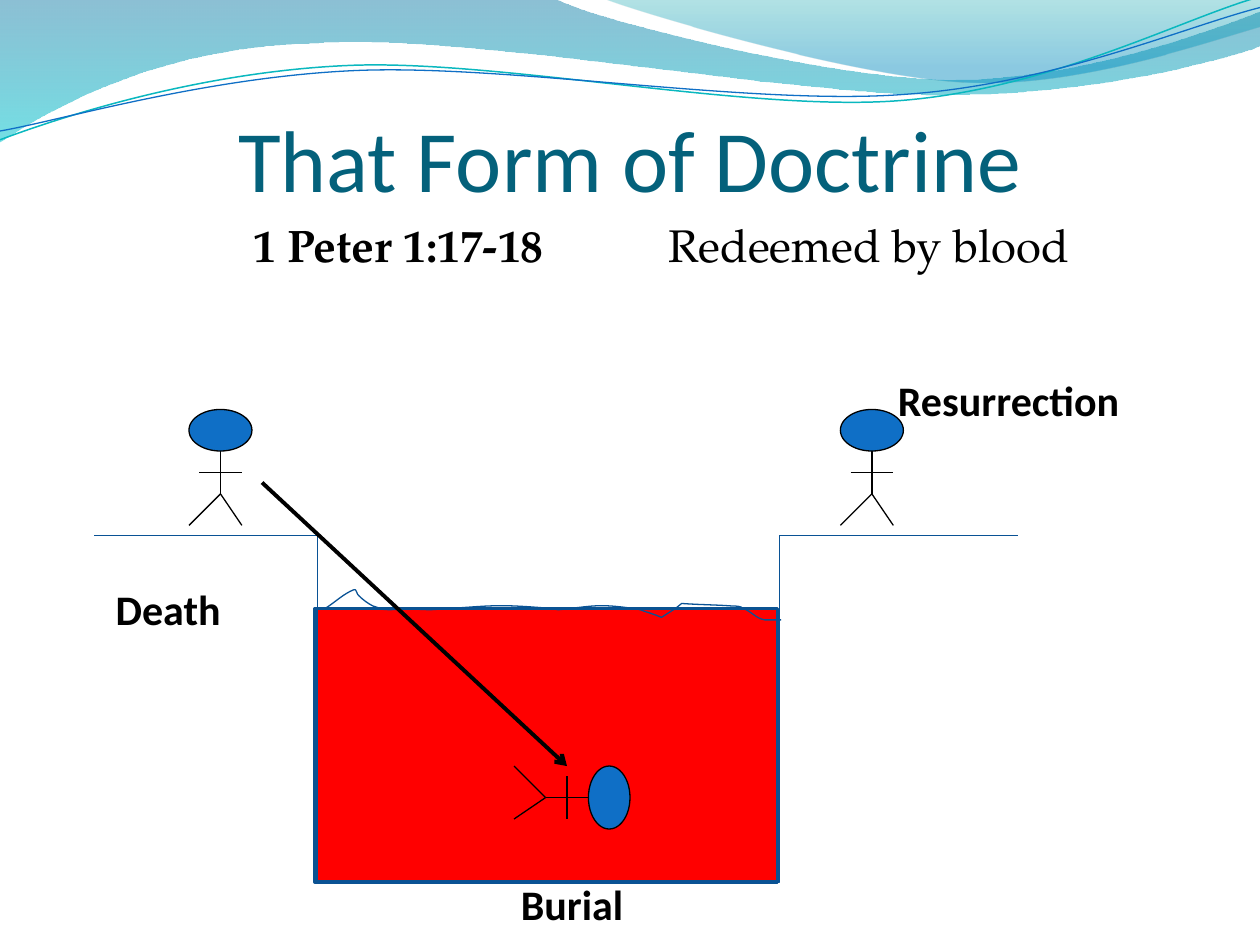
import dataclasses

import pptx
import pptx.dml.color
import pptx.enum.shapes
import pptx.enum.text
import pptx.oxml.ns
import pptx.util
import lxml.etree

Inches = pptx.util.Inches
Pt = pptx.util.Pt
Kind = pptx.enum.shapes.MSO_CONNECTOR
Shape = pptx.enum.shapes.MSO_SHAPE
Align = pptx.enum.text.PP_ALIGN
Anchor = pptx.enum.text.MSO_ANCHOR
Size = pptx.enum.text.MSO_AUTO_SIZE
qn = pptx.oxml.ns.qn


@dataclasses.dataclass(frozen=True)
class Theme:
    title: str = "04617B"
    ink: str = "000000"
    blood: str = "FF0000"
    edge: str = "0B5292"
    bank: str = "095295"
    head: str = "0F6FC6"
    teal: str = "0AB8BF"
    sans: str = "Calibri"
    serif: str = "TeX Gyre Pagella"
    big: int = 50
    verse: int = 26
    label: int = 24
    thin: float = 0.75
    sweep: tuple = ((0, "0074A1", 45), (1, "00C6CF", 55))
    crest: tuple = ((0, "00A1A9", 30), (0.8, "008BBF", 45))


THEME = Theme()

SWEEP = [(0, 0), (4.4, -0.01), (4.76, 0.17, 6.64, 0.63, 7.58, 0.63),
         (8.53, 0.63, 9.58, 0.26, 10, 0.09), (10.01, 0.36),
         (9.83, 0.44, 8.7, 0.76, 7.46, 0.75), (6.22, 0.75, 3.82, 0.28, 2.57, 0.34),
         (1.29, 0.36, 0.46, 0.83, -0.01, 1.13), (0, 0)]
CREST = [(4.79, -0.01), (5.09, 0.11, 6.82, 0.62, 7.69, 0.65),
         (8.56, 0.69, 9.61, 0.32, 10, 0.21), (10, 0), (4.79, -0.01)]
UPPER = [(0, 1.11), (0.48, 0.93, 1.58, 0.57, 2.77, 0.52),
         (3.95, 0.47, 5.93, 0.89, 7.13, 0.8), (8.33, 0.71, 9.38, 0.15, 9.98, -0.02)]
LOWER = [(0, 1.04), (0.47, 0.96, 1.64, 0.61, 2.83, 0.56),
         (4.03, 0.51, 5.97, 0.84, 7.17, 0.75), (8.36, 0.67, 9.41, 0.21, 10, 0.06)]
RIPPLE = [(0.08, 0), (0.16, -0.05, 0.23, -0.12, 0.31, -0.15),
          (0.33, -0.16, 0.33, -0.11, 0.35, -0.1), (0.38, -0.07, 0.42, -0.04, 0.46, -0.02),
          (0.64, 0.04, 0.49, -0.01, 0.91, 0.01), (1.42, -0.02, 1.4, -0.04, 1.88, 0),
          (1.9, 0, 1.91, 0.01, 1.93, 0.01), (2.22, -0.02, 2.24, -0.04, 2.53, 0),
          (2.57, 0, 2.6, 0.02, 2.64, 0.03), (2.7, 0.05), (2.75, 0.07), (2.86, 0),
          (2.91, -0.04), (3.05, -0.03, 3.18, -0.03, 3.31, -0.02),
          (3.34, -0.02, 3.38, -0.02, 3.4, 0), (3.46, 0.02, 3.5, 0.08, 3.57, 0.09),
          (3.61, 0.09, 3.65, 0.09, 3.7, 0.09)]


def tint(code):
    return pptx.dml.color.RGBColor.from_string(code)


def node(parent, name, **attrs):
    return lxml.etree.SubElement(parent, qn(name), attrs)


def stroke(shape, code, width):
    shape.line.color.rgb = tint(code)
    shape.line.width = Pt(width)


def draw(shapes, path, left, top, close=False):
    points = [(Inches(left + part[-2]), Inches(top + part[-1])) for part in path]
    pen = shapes.build_freeform(*points[0])
    pen.add_line_segments(points[1:], close=close)
    shape = pen.convert_to_shape()
    shape.shadow.inherit = False
    lines = list(shape._element.spPr.iter(qn("a:lnTo")))
    for line, part in zip(lines, path[1:]):
        if len(part) == 2:
            continue
        bend = node(line.getparent(), "a:cubicBezTo")
        for x, y in zip(part[::2], part[1::2]):
            node(bend, "a:pt", x=str(Inches(left + x) - shape.left),
                 y=str(Inches(top + y) - shape.top))
        line.getparent().replace(line, bend)
    return shape


def curve(shapes, path, left, top, code, width):
    shape = draw(shapes, path, left, top)
    shape.fill.background()
    stroke(shape, code, width)


def swash(shapes, path, left, top, stops):
    shape = draw(shapes, path, left, top, True)
    shape.line.fill.background()
    shape.fill.gradient()
    shape.fill.gradient_angle = 270
    for stop, (place, code, _) in zip(shape.fill.gradient_stops, stops):
        stop.position = place
        stop.color.rgb = tint(code)
    colors = list(shape._element.spPr.iter(qn("a:srgbClr")))
    for color, (_, _, alpha) in zip(colors, stops):
        node(color, "a:alpha", val=str(alpha * 1000))


def join(shapes, start, end, code, width, kind=Kind.STRAIGHT):
    line = shapes.add_connector(kind, *map(Inches, start + end))
    stroke(line, code, width)
    node(line._element.spPr, "a:effectLst")
    return line


def style(run, face, size, code, bold=False):
    font = run.font
    font.name, font.size, font.bold = face, Pt(size), bold
    font.color.rgb = tint(code)


def waves(shapes, left, top):
    swash(shapes, SWEEP, left, top, THEME.sweep)
    swash(shapes, CREST, left, top, THEME.crest)
    group = shapes.add_group_shape()
    curve(group.shapes, UPPER, left, top, THEME.teal, 0.85)
    curve(group.shapes, LOWER, left, top, THEME.head, THEME.thin)


def heading(title, *box):
    title.left, title.top, title.width, title.height = map(Inches, box)
    frame = title.text_frame
    frame.text = "That Form of Doctrine"
    frame.auto_size = Size.NONE
    frame.vertical_anchor = Anchor.BOTTOM
    frame.margin_left = frame.margin_right = frame.margin_bottom = 0
    frame.margin_top = Inches(0.05)
    para = frame.paragraphs[0]
    para.alignment = Align.CENTER
    style(para.runs[0], THEME.sans, THEME.big, THEME.title)


def verse(shapes, *box):
    frame = shapes.add_textbox(*map(Inches, box)).text_frame
    frame.word_wrap = True
    para = frame.paragraphs[0]
    para.alignment = Align.CENTER
    para.space_before = Pt(5)
    props = para._p.get_or_add_pPr()
    for name, gap in (("marL", 0.3), ("indent", -0.3), ("defTabSz", 1)):
        props.set(name, str(Inches(gap)))
    for text, bold in (("1 Peter 1:17-18\t", True), ("Redeemed by blood", False)):
        run = para.add_run()
        run.text = text
        style(run, THEME.serif, THEME.verse, THEME.ink, bold)


def label(shapes, text, left, top, width):
    box = shapes.add_textbox(*map(Inches, (left, top, width, 0.5)))
    frame = box.text_frame
    frame.text = text
    frame.word_wrap = True
    frame.auto_size = Size.SHAPE_TO_FIT_TEXT
    para = frame.paragraphs[0]
    para.alignment = Align.CENTER
    style(para.runs[0], THEME.sans, THEME.label, THEME.ink, True)


def pool(shapes, left, top, width, height):
    tank = shapes.add_shape(Shape.RECTANGLE, *map(Inches, (left, top, width, height)))
    tank.shadow.inherit = False
    tank.fill.solid()
    tank.fill.fore_color.rgb = tint(THEME.blood)
    stroke(tank, THEME.edge, 2)
    floor = (left + 1.79, top + height)
    ground = top - 0.58
    near, far = (left - 1.75, ground), (left + 5.58, ground)
    for start, end in ((near, floor), (floor, far)):
        join(shapes, start, end, THEME.bank, THEME.thin, Kind.ELBOW)
    curve(shapes, RIPPLE, left, top, THEME.bank, THEME.thin)


def person(shapes, left, top, lying=False):
    tall, wide, high = 0.92, 0.5, 0.33

    def spot(x, y):
        return (left + tall - y, top + x) if lying else (left + x, top + y)

    parts = shapes.add_group_shape().shapes
    hip = (0.25, 0.67)
    limbs = (((0.25, high), hip), (hip, (0, tall)), (hip, (0.42, tall)),
             ((0.08, 0.5), (0.42, 0.5)))
    for start, end in limbs:
        join(parts, spot(*start), spot(*end), THEME.ink, THEME.thin)
    x, y = spot(wide / 2, high / 2)
    head = parts.add_shape(
        Shape.OVAL, *map(Inches, (x - wide / 2, y - high / 2, wide, high)))
    head.rotation = 90 if lying else 0
    head.shadow.inherit = False
    head.fill.solid()
    head.fill.fore_color.rgb = tint(THEME.head)
    stroke(head, THEME.ink, THEME.thin)


def arrow(shapes, start, end):
    line = join(shapes, start, end, THEME.ink, 2.25)
    node(line.line._get_or_add_ln(), "a:tailEnd", type="arrow")


def main():
    deck = pptx.Presentation()
    deck.slide_width, deck.slide_height = Inches(10), Inches(7.5)
    slide = deck.slides.add_slide(deck.slide_layouts[5])
    shapes = slide.shapes
    waves(shapes, 0, 0)
    heading(shapes.title, 0.5, 0.42, 9, 1.25)
    verse(shapes, 0.75, 1.67, 9, 1.08)
    label(shapes, "Death", 0.75, 4.58, 1.17)
    label(shapes, "Burial", 2.75, 6.92, 3.58)
    label(shapes, "Resurrection", 6.67, 2.92, 2.67)
    pool(shapes, 2.5, 4.83, 3.67, 2.17)
    person(shapes, 1.5, 3.25)
    person(shapes, 4.08, 6.08, True)
    person(shapes, 6.67, 3.25)
    arrow(shapes, (2.08, 3.83), (4.5, 6.08))
    deck.save("out.pptx")


if __name__ == "__main__":
    main()
